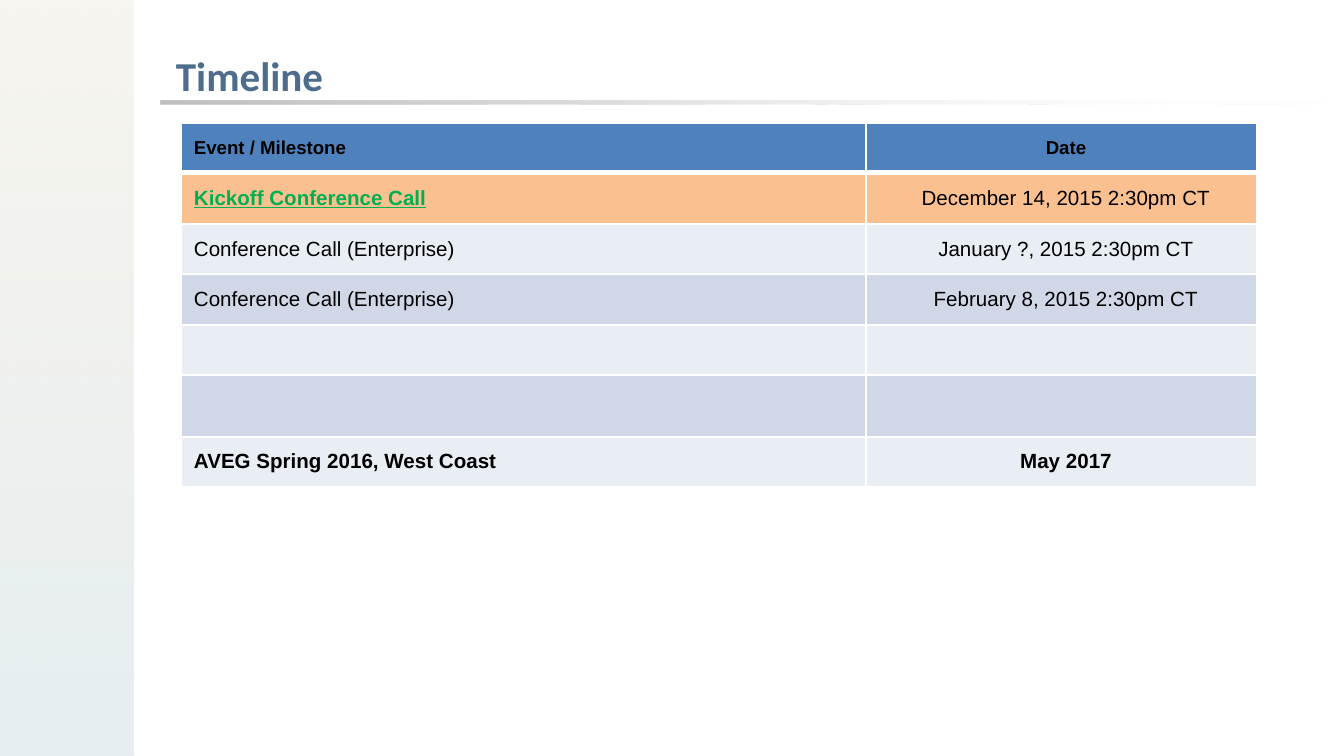
from lxml.etree import SubElement
from pptx import Presentation
from pptx.dml.color import RGBColor
from pptx.enum.shapes import MSO_SHAPE as Shape
from pptx.enum.text import MSO_ANCHOR as Anchor, PP_ALIGN as Align
from pptx.oxml.ns import qn
from pptx.util import Emu, Pt

EMU_PER_PX = 914400 / 134.4

COLORS = {
    "white": "FFFFFF", "black": "000000", "title": "4E6D8C",
    "header": "4F81BD", "current": "FAC090", "light": "E9EDF4",
    "dark": "D0D8E8", "kickoff": "00B050",
    "sand": "EEECE1", "mist": "E6EEF1", "gray": "BFBFBF", "silver": "D9D9D9",
}

HEADER = {"size": Pt(10), "bold": True}
BODY = {"size": Pt(11), "bold": False}
STRONG = {"size": Pt(11), "bold": True}
KICKOFF = {**STRONG, "underline": True, "color": "kickoff"}

# event, date, fill, event format, date format, height
MILESTONES = [
    ("Event / Milestone", "Date", "header", HEADER, HEADER, 50),
    ("Kickoff Conference Call", "December 14, 2015 2:30pm CT", "current", KICKOFF, BODY, 51),
    ("Conference Call (Enterprise)", "January ?, 2015 2:30pm CT", "light", BODY, BODY, 50),
    ("Conference Call (Enterprise)", "February 8, 2015 2:30pm CT", "dark", BODY, BODY, 51),
    ("", "", "light", BODY, BODY, 50),
    ("", "", "dark", BODY, BODY, 62),
    ("AVEG Spring 2016, West Coast", "May 2017", "light", STRONG, STRONG, 50),
]


def px(length):
    return Emu(round(length * EMU_PER_PX))


def box(*lengths):
    return [px(length) for length in lengths]


def rgb(name):
    return RGBColor.from_string(COLORS[name])


def set_margins(frame, left, top, right, bottom):
    sides = {"left": left, "top": top, "right": right, "bottom": bottom}
    for side, length in sides.items():
        setattr(frame, f"margin_{side}", px(length))


def write(paragraph, text, align=Align.LEFT, color="black", name="Arial", **formats):
    paragraph.alignment = align
    target = paragraph.font
    if text:
        run = paragraph.add_run()
        run.text = text
        target = run.font
    for key, value in {"name": name, **formats}.items():
        setattr(target, key, value)
    target.color.rgb = rgb(color)


def add_gradient_bar(slide, bounds, stops, angle):
    """Draw a rectangle whose stops are (position %, colour, opacity %)."""
    bar = slide.shapes.add_shape(Shape.RECTANGLE, *box(*bounds))
    bar.shadow.inherit = False
    bar.line.fill.background()
    bar.fill.gradient()
    gradient = bar.fill._fill._gradFill
    stop_list = gradient.find(qn("a:gsLst"))
    for default_stop in list(stop_list):
        stop_list.remove(default_stop)
    for position, color, opacity in stops:
        stop = SubElement(stop_list, qn("a:gs"), pos=str(position * 1000))
        shade = SubElement(stop, qn("a:srgbClr"), val=COLORS[color])
        if opacity < 100:
            SubElement(shade, qn("a:alpha"), val=str(opacity * 1000))
    gradient.find(qn("a:lin")).set("ang", str(angle * 60000))


def add_title(slide, text):
    frame = slide.shapes.add_textbox(*box(167, 0, 1129, 105)).text_frame
    frame.word_wrap = True
    frame.vertical_anchor = Anchor.BOTTOM
    set_margins(frame, 9, 5, 9, 5)
    heading = frame.paragraphs[0]
    heading.line_spacing = 0.85
    write(heading, text, color="title", name="Calibri", size=Pt(22), bold=True)


def add_borders(cell, widths):
    properties = cell._tc.get_or_add_tcPr()
    for side, width in widths.items():
        border = SubElement(properties, qn(f"a:ln{side}"), w=str(Pt(width)))
        fill = SubElement(border, qn("a:solidFill"))
        SubElement(fill, qn("a:srgbClr"), val=COLORS["white"])


def format_cell(cell, fill, borders):
    add_borders(cell, borders)
    cell.fill.solid()
    cell.fill.fore_color.rgb = rgb(fill)
    cell.vertical_anchor = Anchor.MIDDLE
    set_margins(cell, 13, 0, 4, 0)


def add_timeline(slide, milestones):
    widths = (685, 391)
    heights = [milestone[-1] for milestone in milestones]
    bounds = box(181, 123, sum(widths), sum(heights))
    table = slide.shapes.add_table(len(milestones), len(widths), *bounds).table
    for column, width in zip(table.columns, widths):
        column.width = px(width)
    for index, milestone in enumerate(milestones):
        event, date, fill, event_format, date_format, height = milestone
        row = table.rows[index]
        row.height = px(height)
        borders = {"L": 1, "R": 1, "T": 3 if index == 1 else 1, "B": 3 if index == 0 else 1}
        for cell in row.cells:
            format_cell(cell, fill, borders)
        event_cell, date_cell = row.cells
        write(event_cell.text_frame.paragraphs[0], event, **event_format)
        write(date_cell.text_frame.paragraphs[0], date, Align.CENTER, **date_format)


def main():
    deck = Presentation()
    deck.slide_width, deck.slide_height = box(1344, 756)
    slide = deck.slides.add_slide(deck.slide_layouts[6])
    add_gradient_bar(slide, (0, 0, 134, 756), [(0, "sand", 50), (100, "mist", 100)], 90)
    add_gradient_bar(slide, (161, 101, 1163, 3),
                     [(0, "gray", 100), (34, "silver", 100), (100, "white", 0)], 0)
    add_title(slide, "Timeline")
    add_timeline(slide, MILESTONES)
    deck.save("out.pptx")


if __name__ == "__main__":
    main()
